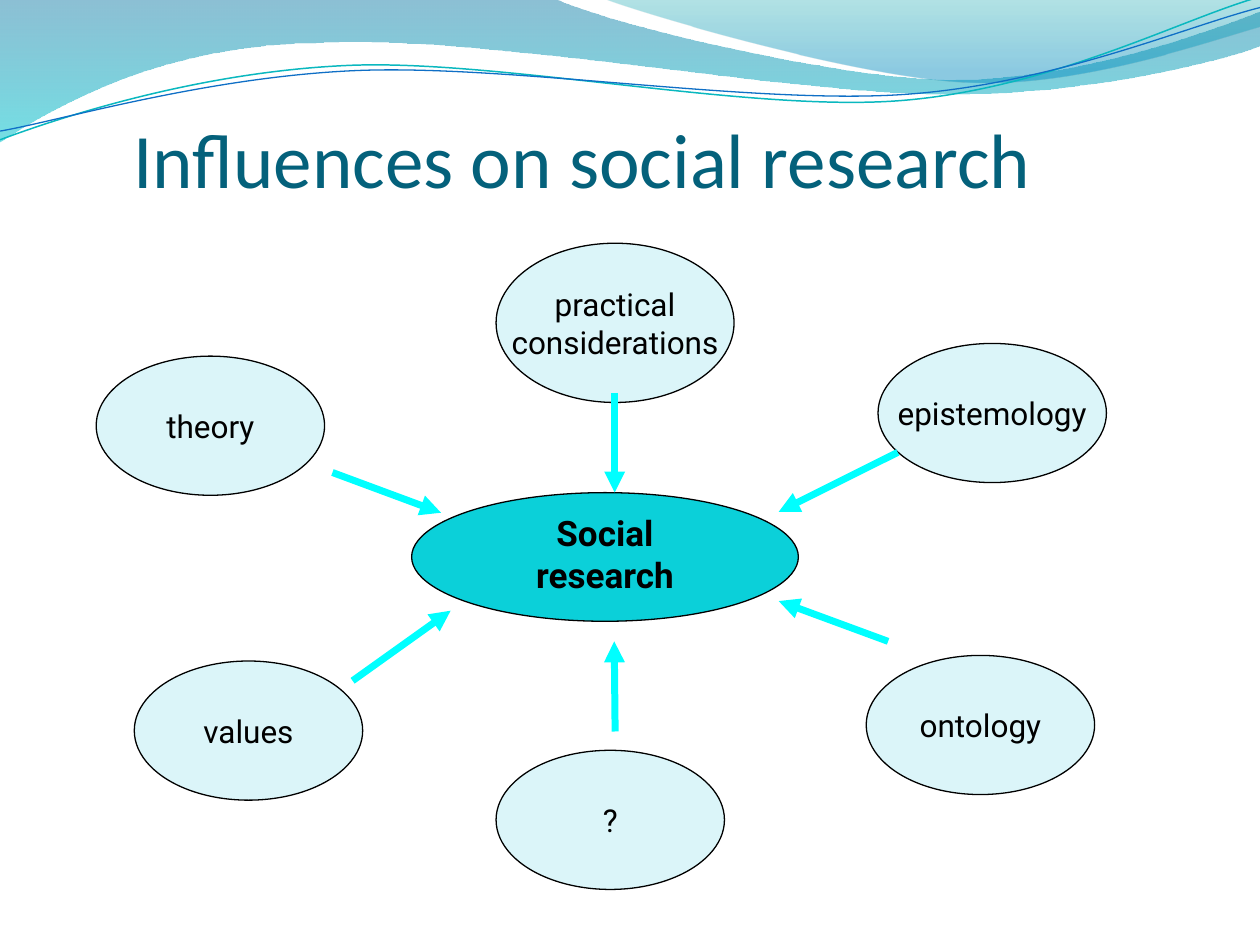
import pptx
import pptx.dml.color
import pptx.enum.shapes
import pptx.enum.text
import pptx.oxml
import pptx.oxml.ns
import pptx.util

Pt = pptx.util.Pt
qn = pptx.oxml.ns.qn
SHAPES = pptx.enum.shapes.MSO_SHAPE
ALIGN = pptx.enum.text.PP_ALIGN
ANCHOR = pptx.enum.text.MSO_ANCHOR
AUTO_SIZE = pptx.enum.text.MSO_AUTO_SIZE
NAMES = pptx.oxml.ns.nsdecls("a")

TITLE = "Influences on social research"
CENTRE = "Social research"

# text, left, top; all lengths in points
OVAL_SIZE = (130.5, 79.5)
OVALS = [
    ("values", 76.75, 377.75),
    ("ontology", 495, 374.5),
    ("theory", 55, 203.5),
    ("epistemology", 501.75, 196.25),
    ("?", 283.5, 428.75),
]
LARGE_OVAL = ("practical\nconsiderations", 283.5, 139, 136, 91)

ARROWS = [
    ((201.5, 389), (257.5, 349)),
    ((190, 270), (252, 293)),
    ((351.25, 224.5), (351.25, 281.5)),
    ((513, 258.5), (445, 292.5)),
    ((507.5, 366.5), (445, 343.5)),
    ((351.5, 418), (351, 366.5)),
]

# A segment of one point is a straight line; one of three is a Bézier curve.
# Gradient stops: position, colour, opacity in percent
WAVES = [
    ((0, -0.7), [
        [(317, -0.7)],
        [(342.7, 12.2), (478.1, 45.4), (545.8, 45.4)],
        [(614.2, 45.4), (689.8, 18.7), (720, 6.5)],
        [(720.7, 25.9)],
        [(707.8, 31.7), (626.4, 54.7), (537.1, 54)],
        [(447.8, 53.3), (275, 20.2), (185, 24.5)],
        [(92.9, 25.2), (33.1, 59.8), (-0.7, 81.4)],
    ], [(0, "0074A1", 45), (1, "00C6CF", 55)]),
    ((344.9, -0.7), [
        [(366.5, 7.9), (491, 44.6), (553.7, 46.8)],
        [(616.3, 49.7), (691.9, 23), (720, 15.1)],
        [(720, 0)],
    ], [(0, "00A1A9", 30), (0.8, "008BBF", 45)]),
]
STRANDS = [
    ((0, 79.9), [
        [(34.6, 67), (113.8, 41), (199.4, 37.4)],
        [(284.4, 33.8), (427, 64.1), (513.4, 57.6)],
        [(599.8, 51.1), (675.4, 10.8), (718.6, -1.4)],
    ], "0AB8BF", 0.85),
    ((0, 74.9), [
        [(33.8, 69.1), (118.1, 43.9), (203.8, 40.3)],
        [(290.2, 36.7), (429.8, 59.8), (516.2, 54)],
        [(601.9, 48.2), (677.5, 15.1), (720, 4.3)],
    ], "0F6FC6", 0.75),
]


def colour(target, value):
    """Set a solid fill, or the colour of a font, line or stop, from hex."""
    if hasattr(target, "solid"):
        target.solid()
        target = target.fore_color
    elif hasattr(target, "color"):
        target = target.color
    target.rgb = pptx.dml.color.RGBColor.from_string(value)


def trace(shapes, start, segments, close):
    """Draw an outline through all points, then bend the three-point segments."""
    builder = shapes.build_freeform(Pt(start[0]), Pt(start[1]), scale=1.0)
    builder.add_line_segments(
        [(Pt(x), Pt(y)) for segment in segments for x, y in segment], close=close)
    outline = builder.convert_to_shape()
    outline.shadow.inherit = False
    lines = iter(list(outline.element.iter(qn("a:lnTo"))))
    for segment in segments:
        steps = [next(lines) for _ in segment]
        if len(steps) == 3:
            curve = pptx.oxml.parse_xml(f"<a:cubicBezTo {NAMES}/>")
            steps[0].addprevious(curve)
            for step in steps:
                curve.append(step[0])
                step.getparent().remove(step)
    return outline


def add_wave(shapes, start, segments, stops):
    wave = trace(shapes, start, segments, True)
    wave.line.fill.background()
    wave.fill.gradient()
    wave.fill.gradient_angle = 270
    for stop, (position, value, _) in zip(wave.fill.gradient_stops, stops):
        stop.position = position
        colour(stop, value)
    tints = wave.element.iter(qn("a:srgbClr"))
    for tint, (_, _, opacity) in zip(tints, stops):
        tint.append(pptx.oxml.parse_xml(
            f'<a:alpha {NAMES} val="{opacity * 1000}"/>'))
    return wave


def add_strand(shapes, start, segments, value, width):
    strand = trace(shapes, start, segments, False)
    strand.fill.background()
    colour(strand.line, value)
    strand.line.width = Pt(width)


def decorate_master(master, shapes):
    """Draw the waves and strands, then move them behind the master's text."""
    parts = [add_wave(shapes, *wave) for wave in WAVES]
    group = shapes.add_group_shape()
    for strand in STRANDS:
        add_strand(group.shapes, *strand)
    tree = master.element.cSld.spTree
    number = 100
    for position, part in enumerate([*parts, group], start=2):
        for label in part.element.iter(qn("p:cNvPr")):
            number += 1
            label.set("id", str(number))
        tree.insert(position, part.element)


def add_box(shapes, kind, text, left, top, width, height, fill,
            size=18, bold=False, outlined=True):
    box = shapes.add_shape(kind, Pt(left), Pt(top), Pt(width), Pt(height))
    box.shadow.inherit = False
    colour(box.fill, fill)
    if outlined:
        colour(box.line, "000000")
        box.line.width = Pt(0.75)
    else:
        box.line.fill.background()
    if text:
        box.text_frame.text = text
        for para in box.text_frame.paragraphs:
            para.alignment = ALIGN.CENTER
            para.font.name = "Roboto"
            para.font.size = Pt(size)
            para.font.bold = bold
            colour(para.font, "000000")
    return box


def add_oval(shapes, text, left, top, width, height):
    oval = add_box(shapes, SHAPES.OVAL, text, left, top, width, height, "DBF5F9")
    oval.text_frame.vertical_anchor = ANCHOR.MIDDLE
    oval.text_frame.word_wrap = False


def add_arrow(shapes, start, end):
    arrow = shapes.add_connector(pptx.enum.shapes.MSO_CONNECTOR.STRAIGHT,
                                 *map(Pt, start + end))
    colour(arrow.line, "00FFFF")
    arrow.line.width = Pt(4)
    properties = arrow.element.spPr
    properties.find(qn("a:ln")).append(
        pptx.oxml.parse_xml(f'<a:tailEnd {NAMES} type="triangle"/>'))
    properties.append(pptx.oxml.parse_xml(f"<a:effectLst {NAMES}/>"))


def place_title(title):
    title.left, title.top, title.width, title.height = map(Pt, (76.25, 26.25, 539, 90))
    frame = title.text_frame
    frame.text = TITLE
    frame.auto_size = AUTO_SIZE.NONE
    frame.word_wrap = True
    frame.vertical_anchor = ANCHOR.BOTTOM
    frame.margin_left = frame.margin_right = frame.margin_bottom = 0
    frame.margin_top = Pt(3.6)
    para = frame.paragraphs[0]
    para.alignment = ALIGN.LEFT
    para.font.name = "Calibri"
    para.font.size = Pt(44)
    colour(para.font, "04617B")


def main():
    deck = pptx.Presentation()
    deck.slide_width, deck.slide_height = Pt(720), Pt(540)
    page = deck.slides.add_slide(deck.slide_layouts[5])
    shapes = page.shapes
    decorate_master(deck.slide_master, shapes)

    add_box(shapes, SHAPES.OVAL, "", 235.25, 281.5, 221, 73.5, "0BD0D9")
    title = shapes.title
    place_title(title)
    title.element.getparent().append(title.element)  # in front of the centre oval

    label = add_box(shapes, SHAPES.RECTANGLE, CENTRE, 286.25, 288.75, 119, 55.5,
                    "0BD0D9", size=20, bold=True, outlined=False)
    label.text_frame.vertical_anchor = ANCHOR.TOP
    label.text_frame.word_wrap = True
    label.text_frame.auto_size = AUTO_SIZE.SHAPE_TO_FIT_TEXT
    for text, left, top in OVALS:
        add_oval(shapes, text, left, top, *OVAL_SIZE)
    add_oval(shapes, *LARGE_OVAL)
    for start, end in ARROWS:
        add_arrow(shapes, start, end)
    deck.save("out.pptx")


if __name__ == "__main__":
    main()
